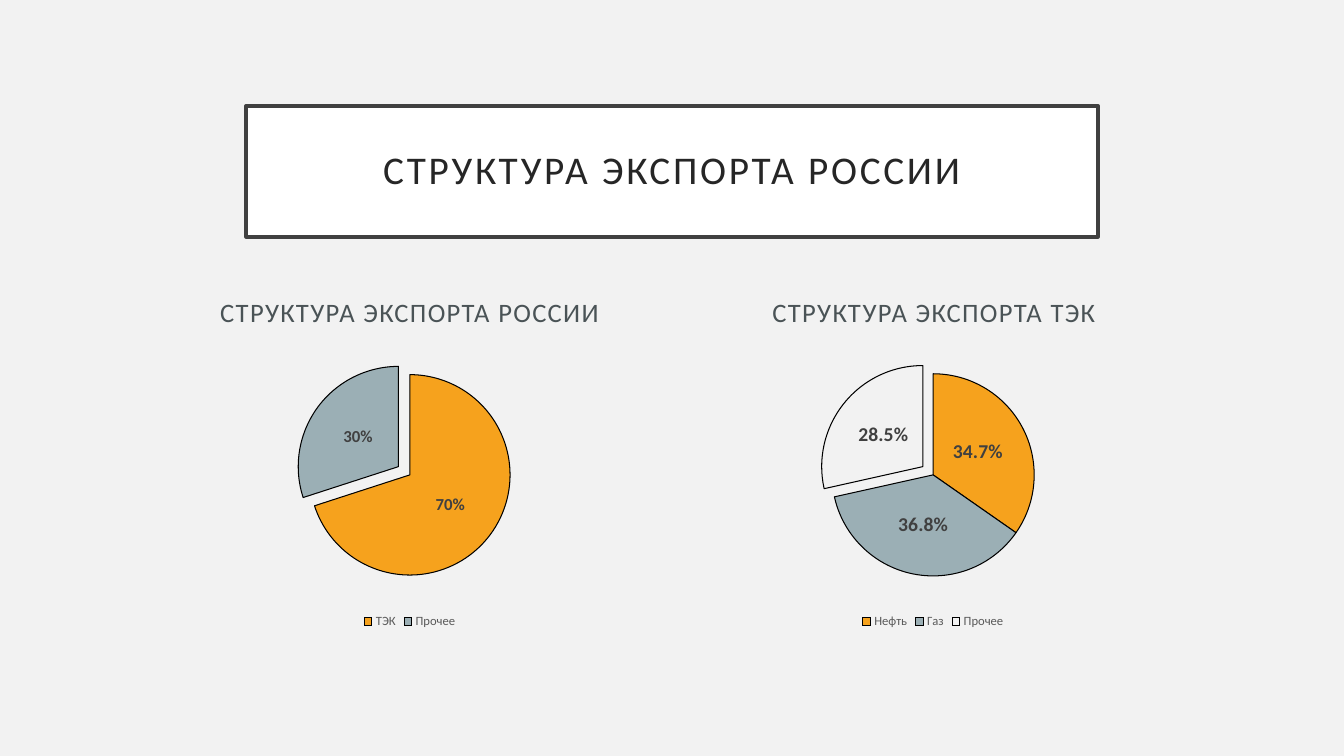
from pptx import Presentation
from pptx.chart.data import CategoryChartData
from pptx.dml.color import RGBColor
from pptx.enum.chart import XL_CHART_TYPE, XL_LABEL_POSITION, XL_LEGEND_POSITION
from pptx.enum.shapes import MSO_SHAPE
from pptx.enum.text import MSO_ANCHOR, PP_ALIGN
from pptx.oxml import parse_xml
from pptx.oxml.ns import nsdecls
from pptx.util import Inches, Pt

FONT = "Calibri"
PAPER = RGBColor(0xF2, 0xF2, 0xF2)
WHITE = RGBColor(0xFF, 0xFF, 0xFF)
BLACK = RGBColor(0x00, 0x00, 0x00)
INK = RGBColor(0x26, 0x26, 0x26)
DARK = RGBColor(0x40, 0x40, 0x40)
SLATE = RGBColor(0x4A, 0x53, 0x56)
GRAY = RGBColor(0x59, 0x59, 0x59)
ORANGE = RGBColor(0xF6, 0xA2, 0x1D)
STEEL = RGBColor(0x9B, 0xAF, 0xB5)
SLICE_COLORS = [ORANGE, STEEL, PAPER]


def set_font(font, size, color, bold=False):
    values = {"name": FONT, "size": Pt(size), "bold": bold}
    for name, value in values.items():
        setattr(font, name, value)
    font.color.rgb = color


def write_caps(shape, text, size, color, spacing, frame_format, para_format):
    """Write one centred, letter-spaced line into a shape."""
    frame = shape.text_frame
    for name, value in frame_format.items():
        setattr(frame, name, value)
    para = frame.paragraphs[0]
    for name, value in para_format.items():
        setattr(para, name, value)
    para.alignment = PP_ALIGN.CENTER
    span = para.add_run()
    span.text = text
    set_font(span.font, size, color)
    span.font._element.set("spc", str(spacing * 100))


def add_title(page, text):
    box = page.shapes.add_shape(
        MSO_SHAPE.RECTANGLE, Inches(2.44), Inches(1.05), Inches(8.45), Inches(1.3))
    box.shadow.inherit = False
    box.fill.solid()
    box.fill.fore_color.rgb = WHITE
    box.line.color.rgb = DARK
    box.line.width = Pt(2.5)
    frame_format = {"word_wrap": True, "vertical_anchor": MSO_ANCHOR.MIDDLE}
    for side in ("left", "top", "right", "bottom"):
        frame_format[f"margin_{side}"] = Inches(0.2)
    write_caps(box, text, 28, INK, 2, frame_format, {"line_spacing": 0.9})


def add_heading(page, left, text):
    box = page.shapes.add_textbox(Inches(left), Inches(2.53), Inches(4.67), Inches(0.77))
    write_caps(box, text, 19, SLATE, 1,
               {"word_wrap": True, "vertical_anchor": MSO_ANCHOR.BOTTOM},
               {"space_before": Pt(10)})


def add_pie(page, left, width, shares, number_format, label_size, explosion):
    data = CategoryChartData(number_format=number_format)
    data.categories = list(shares)
    data.add_series("Доля", list(shares.values()))
    chart = page.shapes.add_chart(
        XL_CHART_TYPE.PIE, Inches(left), Inches(3.44), Inches(width), Inches(2.84), data).chart
    chart.has_title = False
    set_font(chart.font, 10, BLACK)

    # Legend
    chart.has_legend = True
    chart.legend.position = XL_LEGEND_POSITION.BOTTOM
    chart.legend.include_in_layout = False
    set_font(chart.legend.font, 9, GRAY)

    # Slices, the last one pulled out
    plot = chart.plots[0]
    plot.vary_by_categories = True
    series = plot.series[0]
    for index, color in enumerate(SLICE_COLORS[:len(shares)]):
        slice_format = series.points[index].format
        slice_format.fill.solid()
        slice_format.fill.fore_color.rgb = color
        slice_format.line.color.rgb = BLACK
        slice_format.line.width = Pt(0.75)
    last_point = series._element.findall("{*}dPt")[-1]
    last_point.find("{*}spPr").addprevious(
        parse_xml(f'<c:explosion {nsdecls("c")} val="{explosion}"/>'))

    # Value labels
    labels = series.data_labels
    label_format = {"show_value": True, "number_format": number_format,
                    "number_format_is_linked": False,
                    "position": XL_LABEL_POSITION.CENTER}
    for name, value in label_format.items():
        setattr(labels, name, value)
    set_font(labels.font, label_size, DARK, bold=True)


def main():
    deck = Presentation()
    deck.slide_width = Inches(13.33)
    deck.slide_height = Inches(7.5)
    page = deck.slides.add_slide(deck.slide_layouts[6])
    page.background.fill.solid()
    page.background.fill.fore_color.rgb = PAPER

    add_title(page, "СТРУКТУРА ЭКСПОРТА РОССИИ")

    # Total exports
    add_heading(page, 1.73, "СТРУКТУРА ЭКСПОРТА РОССИИ")
    add_pie(page, 1.73, 4.67, {"ТЭК": 0.7, "Прочее": 0.3}, "0%", 12, 14)

    # Fuel and energy exports
    add_heading(page, 6.93, "СТРУКТУРА ЭКСПОРТА ТЭК")
    add_pie(page, 6.93, 4.65, {"Нефть": 0.347, "Газ": 0.368, "Прочее": 0.285},
            "0.0%", 14, 13)

    deck.save("out.pptx")


if __name__ == "__main__":
    main()
